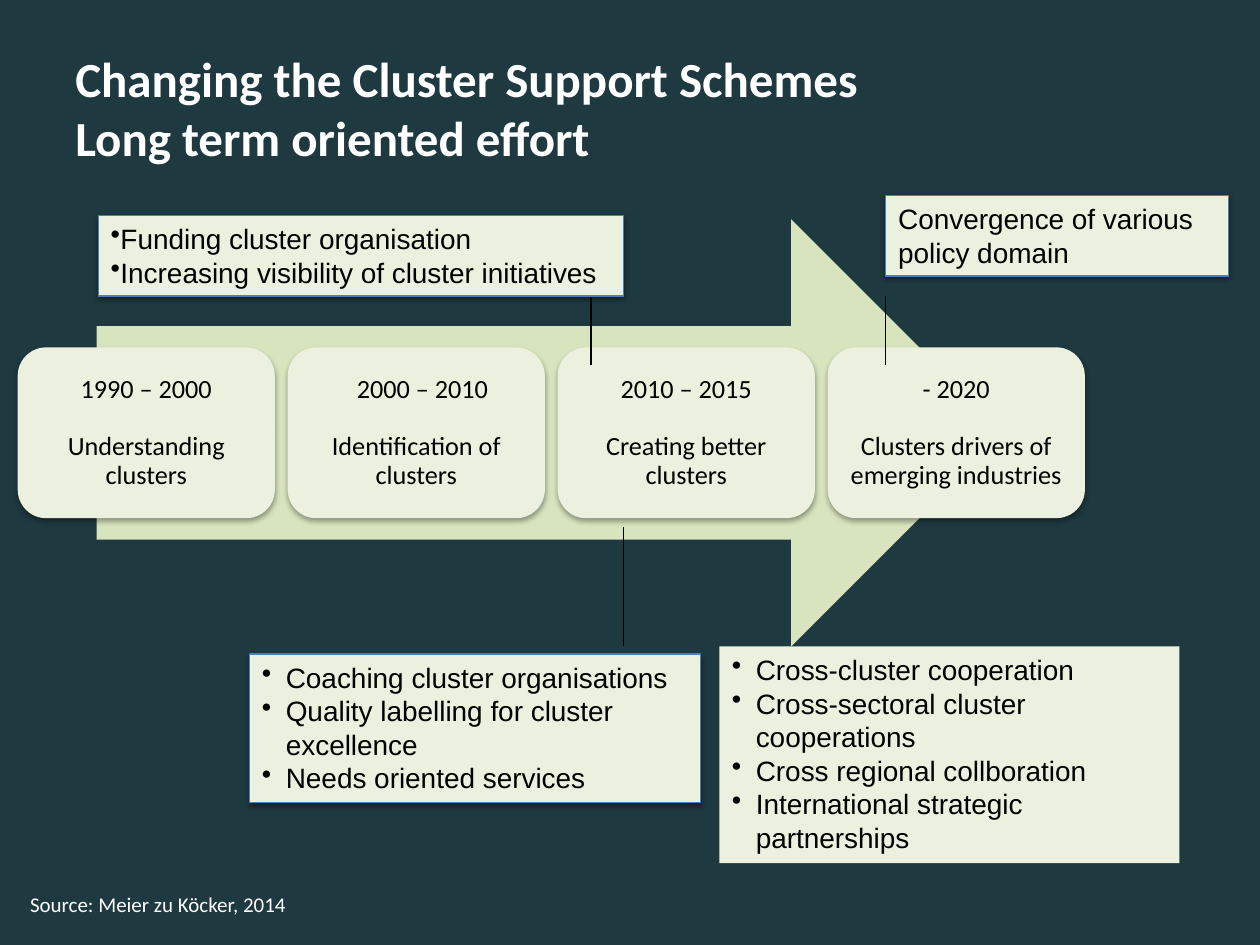
from lxml.etree import SubElement
from pptx import Presentation
from pptx.dml.color import RGBColor
from pptx.enum.shapes import MSO_CONNECTOR, MSO_SHAPE
from pptx.enum.text import MSO_ANCHOR, PP_ALIGN
from pptx.oxml.ns import qn
from pptx.util import Inches, Pt

HEX = {"back": "1F3940", "arrow": "D7E4BD", "pale": "EBF1DE",
       "edge": "4B7EBC", "ink": "000000", "white": "FFFFFF"}
UNIT = 0.1  # one grid column or row, in inches
COLS, ROWS = 100, 75

CARDS = [("1990 – 2000", "Understanding clusters", 0),
         ("2000 – 2010", "Identification of clusters", 0.1),
         ("2010 – 2015", "Creating better clusters", 0),
         ("- 2020", "Clusters drivers of emerging industries", 0)]
# box, lines, bulleted, hanging indent in inches, framed
NOTES = [
    ((7.8, 17.1, 41.7, 6.4),
     ["Funding cluster organisation",
      "Increasing visibility of cluster initiatives"], True, 0, True),
    ((19.8, 51.9, 35.8, 11.8),
     ["Coaching cluster organisations",
      "Quality labelling for cluster excellence",
      "Needs oriented services"], True, 0.19, True),
    ((57.1, 51.3, 36.5, 17.2),
     ["Cross-cluster cooperation", "Cross-sectoral cluster cooperations",
      "Cross regional collboration",
      "International strategic partnerships"], True, 0.19, False),
    ((70.3, 15.5, 27.2, 6.4),
     ["Convergence of various policy domain"], False, 0, True),
]
# column, top row, bottom row
STEMS = [(46.9, 23.5, 29), (49.5, 41.8, 51.3), (70.3, 23.5, 29)]


def grid(*nums):
    return [Inches(n * UNIT) for n in nums]


def tone(name):
    return RGBColor.from_string(HEX[name])


def shade(shape, alpha, blur, dist):
    """Give the shape a soft shadow straight below it."""
    fx = shape._element.spPr.find(qn("a:effectLst"))
    drop = SubElement(fx, qn("a:outerShdw"), blurRad=str(Pt(blur)),
                      dist=str(Pt(dist)), dir="5400000", rotWithShape="0")
    ink = SubElement(drop, qn("a:srgbClr"), val=HEX["ink"])
    SubElement(ink, qn("a:alpha"), val=str(alpha * 1000))


def block(slide, kind, box, fill, edge=None):
    shape = slide.shapes.add_shape(kind, *grid(*box))
    shape.shadow.inherit = False
    shape.fill.solid()
    shape.fill.fore_color.rgb = tone(fill)
    if edge:
        shape.line.color.rgb = tone(edge)
        shape.line.width = Pt(0.75)
    else:
        shape.line.fill.background()
    return shape


def write(shape, lines, size=16, font="Arial", color="ink", bold=False,
          align=PP_ALIGN.LEFT, anchor=MSO_ANCHOR.TOP, inset=None,
          lead=None, gap=0, bullet=False, hang=0, shift=0):
    """Fill a shape with paragraphs; shift indents the first of them."""
    frame = shape.text_frame
    frame.word_wrap = True
    frame.vertical_anchor = anchor
    if inset is not None:
        frame.margin_left = frame.margin_right = Inches(inset)
        frame.margin_top = frame.margin_bottom = Inches(inset)
    for i, line in enumerate(lines):
        para = frame.paragraphs[0] if i == 0 else frame.add_paragraph()
        para.text = line
        para.alignment = align
        para.line_spacing = lead
        if i < len(lines) - 1:
            para.space_after = Pt(gap)
        face = para.font
        face.size, face.name, face.bold = Pt(size), font, bold
        face.color.rgb = tone(color)
        props = para._p.get_or_add_pPr()
        if shift and i == 0:
            props.set("marL", str(Inches(shift)))
        if bullet:
            props.set("marL", str(Inches(hang)))
            props.set("indent", str(-Inches(hang)))
            mark = SubElement(props, qn("a:buChar"), char="•")
            # bullets must come before the default run format
            base = props.find(qn("a:defRPr"))
            if base is not None:
                base.addprevious(mark)
        for run in para.runs:
            run.font.size, run.font.name = Pt(size), font
            run.font.bold = bold
            run.font.color.rgb = tone(color)


def label(slide, box, lines, **form):
    write(slide.shapes.add_textbox(*grid(*box)), lines, font="Calibri",
          color="white", **form)


def chain(slide, box):
    """Draw the arrow with the row of period cards across it."""
    left, top, width, height = box
    block(slide, MSO_SHAPE.RIGHT_ARROW,
          (left + width * 0.074, top, width * 0.851, height), "arrow")
    wide, tall = width * 0.241, height * 0.4
    step = (width - wide) / (len(CARDS) - 1)
    for i, (date, goal, shift) in enumerate(CARDS):
        spot = (left + i * step, top + (height - tall) / 2, wide, tall)
        card = block(slide, MSO_SHAPE.ROUNDED_RECTANGLE, spot, "pale")
        shade(card, 35, 3.1, 1.8)
        write(card, [date, goal], size=15, font="Calibri", inset=0.06,
              align=PP_ALIGN.CENTER, anchor=MSO_ANCHOR.MIDDLE,
              lead=0.9, gap=16.5, shift=shift)


def note(slide, box, lines, bullet, hang, framed):
    shape = block(slide, MSO_SHAPE.RECTANGLE, box, "pale",
                  "edge" if framed else None)
    if framed:
        shade(shape, 38, 3.1, 1.6)
    write(shape, lines, bullet=bullet, hang=hang)


def stem(slide, col, top, base):
    line = slide.shapes.add_connector(MSO_CONNECTOR.STRAIGHT,
                                      *grid(col, top, col, base))
    line.line.color.rgb = tone("ink")
    line.line.width = Pt(0.75)
    SubElement(line._element.spPr, qn("a:effectLst"))


def main():
    deck = Presentation()
    deck.slide_width, deck.slide_height = grid(COLS, ROWS)
    slide = deck.slides.add_slide(deck.slide_layouts[6])
    slide.background.fill.solid()
    slide.background.fill.fore_color.rgb = tone("back")
    label(slide, (5, 2.3, 65.3, 12.5),
          ["Changing the Cluster Support Schemes\vLong term oriented effort"],
          size=28, bold=True, anchor=MSO_ANCHOR.MIDDLE)
    chain(slide, (1.4, 17.4, 84.7, 33.9))
    for item in STEMS:
        stem(slide, *item)
    for item in NOTES:
        note(slide, *item)
    label(slide, (1.4, 70.3, 38.4, 3), ["Source: Meier zu Köcker, 2014"],
          size=12)
    deck.save("out.pptx")


if __name__ == "__main__":
    main()
